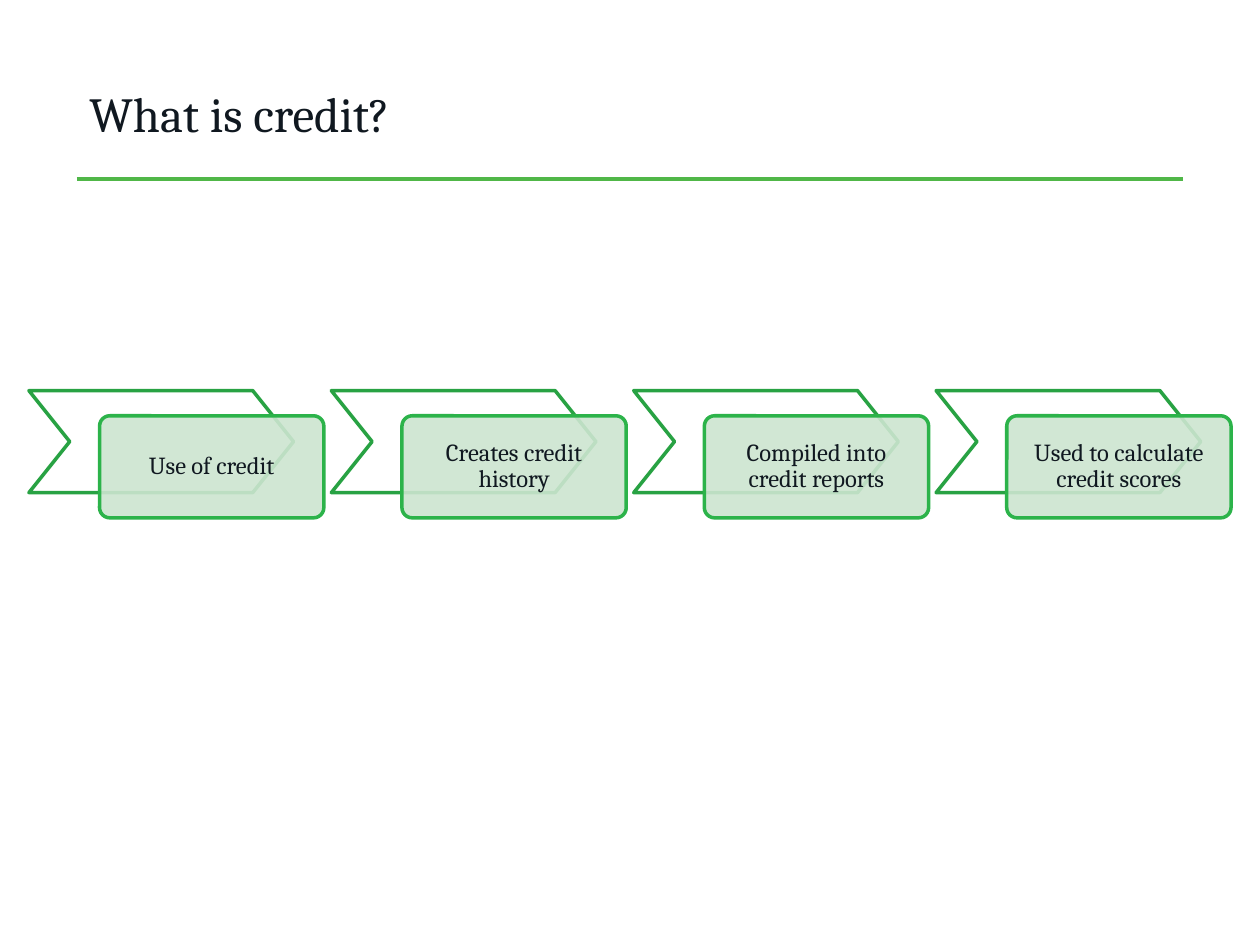
from lxml.etree import SubElement
from pptx import Presentation
from pptx.dml.color import RGBColor
from pptx.enum.shapes import MSO_CONNECTOR, MSO_SHAPE
from pptx.enum.text import MSO_ANCHOR, PP_ALIGN
from pptx.oxml.ns import qn
from pptx.util import Inches, Pt

INK = RGBColor(0x10, 0x18, 0x20)
WHITE = RGBColor(0xFF, 0xFF, 0xFF)
RULE_GREEN = RGBColor(0x50, 0xB7, 0x48)
CHEVRON_GREEN = RGBColor(0x28, 0xA2, 0x43)
CARD_GREEN = RGBColor(0x2C, 0xB3, 0x4A)
CARD_TINT = RGBColor(0xCD, 0xE5, 0xD0)

STEPS = [
    "Use of credit",
    "Creates credit history",
    "Compiled into credit reports",
    "Used to calculate credit scores",
]
FIRST_LEFT = 0.23
STEP_PITCH = 2.4
CHEVRON_TOP = 3.1
CARD_SHIFT_X = 0.56
CARD_SHIFT_Y = 0.2
STEP_HEIGHT = 0.81


def write_text(holder, text, size, align=PP_ALIGN.LEFT, margins=(0.1, 0.05), spacing=1.0):
    frame = holder.text_frame
    frame.word_wrap = True
    frame.vertical_anchor = MSO_ANCHOR.MIDDLE
    frame.margin_left = frame.margin_right = Inches(margins[0])
    frame.margin_top = frame.margin_bottom = Inches(margins[1])
    paragraph = frame.paragraphs[0]
    paragraph.text = text
    paragraph.alignment = align
    paragraph.line_spacing = spacing
    paragraph.font.name = "Cambria"
    paragraph.font.size = Pt(size)
    paragraph.font.color.rgb = INK


def add_title(slide, text):
    title = slide.shapes.title
    title.left, title.top = Inches(0.61), Inches(0.49)
    title.width, title.height = Inches(8.79), Inches(0.81)
    write_text(title, text, size=28)


def add_rule(slide, left, right, top):
    rule = slide.shapes.add_connector(
        MSO_CONNECTOR.STRAIGHT, Inches(left), Inches(top), Inches(right), Inches(top)
    )
    rule.line.color.rgb = RULE_GREEN
    rule.line.width = Pt(2)
    SubElement(rule._element.spPr, qn("a:effectLst"))


def add_outlined(slide, preset, left, top, width, adjustment, fill, outline):
    shape = slide.shapes.add_shape(
        preset, Inches(left), Inches(top), Inches(width), Inches(STEP_HEIGHT)
    )
    shape.adjustments[0] = adjustment
    shape.shadow.inherit = False
    shape.fill.solid()
    shape.fill.fore_color.rgb = fill
    shape.line.color.rgb = outline
    shape.line.width = Pt(2)
    return shape


def set_opacity(shape, percent):
    color = shape._element.spPr.find(qn("a:solidFill")).find(qn("a:srgbClr"))
    SubElement(color, qn("a:alpha")).set("val", str(percent * 1000))


def add_step(slide, left, label):
    add_outlined(
        slide, MSO_SHAPE.CHEVRON, left, CHEVRON_TOP, 2.1, 0.4, WHITE, CHEVRON_GREEN
    )
    card = add_outlined(
        slide, MSO_SHAPE.ROUNDED_RECTANGLE, left + CARD_SHIFT_X,
        CHEVRON_TOP + CARD_SHIFT_Y, 1.78, 0.1, CARD_TINT, CARD_GREEN,
    )
    set_opacity(card, 90)
    write_text(
        card, label, size=14, align=PP_ALIGN.CENTER, margins=(0.11, 0.11), spacing=0.9
    )


def main():
    deck = Presentation()
    deck.slide_width, deck.slide_height = Inches(10), Inches(7.5)
    slide = deck.slides.add_slide(deck.slide_layouts[5])
    add_rule(slide, 0.61, 9.39, 1.42)
    add_title(slide, "What is credit?")
    for index, label in enumerate(STEPS):
        add_step(slide, FIRST_LEFT + index * STEP_PITCH, label)
    deck.save("out.pptx")


if __name__ == "__main__":
    main()
